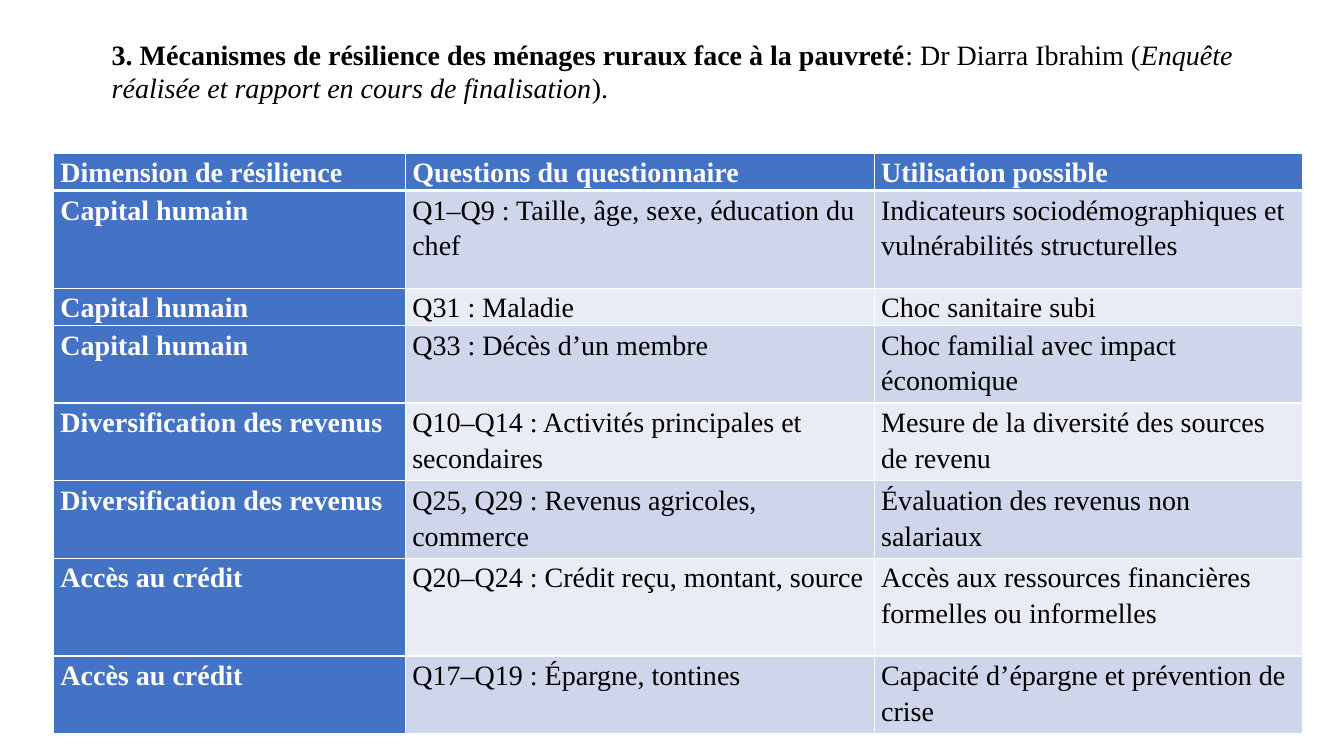
from lxml import etree
from pptx import Presentation
from pptx.dml.color import RGBColor
from pptx.oxml.ns import qn
from pptx.util import Inches, Pt

TITLE = [
    ("3. Mécanismes de résilience des ménages ruraux face à la pauvreté", {"bold": True}),
    (": Dr Diarra Ibrahim (", {}),
    ("Enquête réalisée et rapport en cours de finalisation", {"italic": True}),
    (").", {}),
]
HEADER = ("Dimension de résilience", "Questions du questionnaire", "Utilisation possible")
DIMENSIONS = [
    ("Capital humain", "Q1–Q9 : Taille, âge, sexe, éducation du chef",
     "Indicateurs sociodémographiques et vulnérabilités structurelles"),
    ("Capital humain", "Q31 : Maladie", "Choc sanitaire subi"),
    ("Capital humain", "Q33 : Décès d’un membre", "Choc familial avec impact économique"),
    ("Diversification des revenus", "Q10–Q14 : Activités principales et secondaires",
     "Mesure de la diversité des sources de revenu"),
    ("Diversification des revenus", "Q25, Q29 : Revenus agricoles, commerce",
     "Évaluation des revenus non salariaux"),
    ("Accès au crédit", "Q20–Q24 : Crédit reçu, montant, source",
     "Accès aux ressources financières formelles ou informelles"),
    ("Accès au crédit", "Q17–Q19 : Épargne, tontines",
     "Capacité d’épargne et prévention de crise"),
]

FONT, SIZE = "Times New Roman", 20
WHITE, BLACK, BLUE = "FFFFFF", "000000", "4472C4"
BANDS = ("CFD5EA", "E9EBF5")
SLIDE_W, SLIDE_H = 13.33, 7.5
TABLE_LEFT, TABLE_TOP = 0.53, 1.52
COLUMN_WIDTHS = (3.49, 4.65, 4.25)
SHORT, MEDIUM, TALL = 0.37, 0.77, 0.97
ROW_HEIGHTS = (SHORT, TALL, SHORT, MEDIUM, MEDIUM, MEDIUM, TALL, MEDIUM)
CELL_INSET = 0.07
THIN, THICK = 1, 3


def color(hex_text):
    return RGBColor.from_string(hex_text)


def add_text(paragraph, text, ink=BLACK, bold=False, italic=False):
    run = paragraph.add_run()
    run.text = text
    run.font.name, run.font.size = FONT, Pt(SIZE)
    run.font.bold, run.font.italic = bold, italic
    run.font.color.rgb = color(ink)


def add_borders(cell, top, bottom):
    """Draw white lines round a cell; widths in points. Call before filling it."""
    properties = cell._tc.get_or_add_tcPr()
    for side, width in (("L", THIN), ("R", THIN), ("T", top), ("B", bottom)):
        line = etree.SubElement(properties, qn(f"a:ln{side}"), w=str(Pt(width)))
        fill = etree.SubElement(line, qn("a:solidFill"))
        etree.SubElement(fill, qn("a:srgbClr"), val=WHITE)


def fill_cell(cell, text, row, column):
    heading = row == 0 or column == 0
    cell.margin_left = cell.margin_right = Inches(CELL_INSET)
    cell.margin_top = cell.margin_bottom = 0
    add_borders(cell, THICK if row == 1 else THIN, THICK if row == 0 else THIN)
    cell.fill.solid()
    cell.fill.fore_color.rgb = color(BLUE if heading else BANDS[(row - 1) % 2])
    paragraph = cell.text_frame.paragraphs[0]
    paragraph.line_spacing, paragraph.space_after = 1.15, Pt(10)
    add_text(paragraph, text, ink=WHITE if heading else BLACK, bold=heading)


def add_resilience_table(slide):
    rows = [HEADER] + DIMENSIONS
    table = slide.shapes.add_table(
        len(rows), len(HEADER), Inches(TABLE_LEFT), Inches(TABLE_TOP),
        Inches(sum(COLUMN_WIDTHS)), Inches(sum(ROW_HEIGHTS))).table
    for column, width in zip(table.columns, COLUMN_WIDTHS):
        column.width = Inches(width)
    for row, height in zip(table.rows, ROW_HEIGHTS):
        row.height = Inches(height)
    for r, texts in enumerate(rows):
        for c, text in enumerate(texts):
            fill_cell(table.cell(r, c), text, r, c)


def add_title(slide):
    title = slide.shapes.add_textbox(Inches(1.01), Inches(0.32), Inches(11.33), Inches(0.77))
    title.text_frame.word_wrap = True
    for text, style in TITLE:
        add_text(title.text_frame.paragraphs[0], text, **style)


def main():
    deck = Presentation()
    deck.slide_width, deck.slide_height = Inches(SLIDE_W), Inches(SLIDE_H)
    slide = deck.slides.add_slide(deck.slide_layouts[6])
    add_resilience_table(slide)
    add_title(slide)
    deck.save("out.pptx")


if __name__ == "__main__":
    main()
